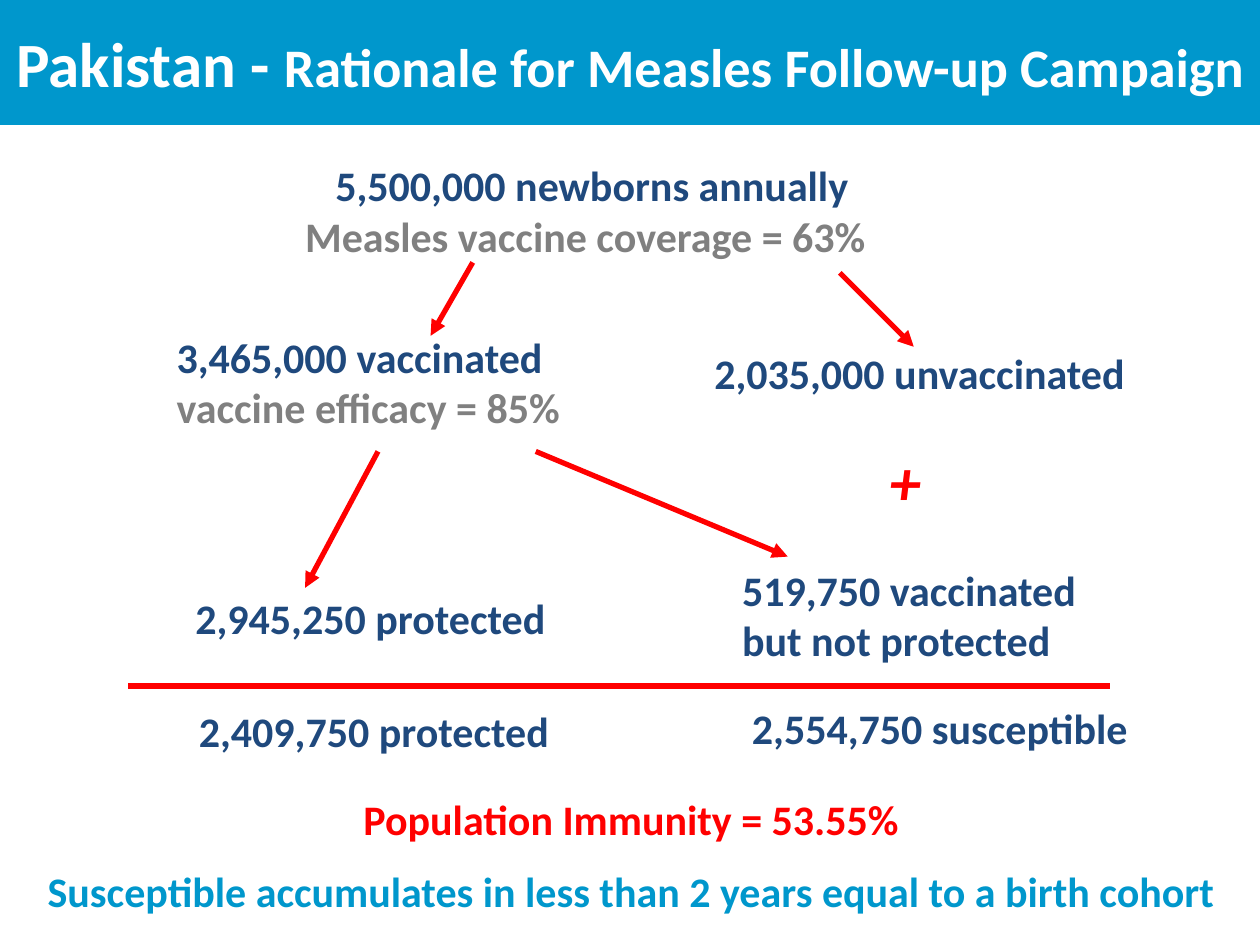
from lxml import etree
from pptx import Presentation
from pptx import util as u
from pptx.dml.color import RGBColor
from pptx.enum import shapes, text
from pptx.oxml.ns import qn

COLOURS = {
    "blue": "0097CC",
    "navy": "1F497D",
    "grey": "808080",
    "red": "FF0000",
    "white": "FFFFFF",
}


class FlowSlide:
    """Hold the style and the slide, and draw each kind of element."""

    font = "Calibri"
    size = 24

    def __init__(self, slide):
        self.slide = slide

    def colour(self, name):
        return RGBColor.from_string(COLOURS[name])

    def format_run(self, run, colour, size=None, italic=None):
        run.font.name = self.font
        run.font.size = u.Pt(size or self.size)
        run.font.bold = True
        run.font.italic = italic
        run.font.color.rgb = self.colour(colour)

    def clear_margins(self, frame):
        frame.margin_left = frame.margin_right = 0
        frame.margin_top = frame.margin_bottom = 0

    def banner(self, width, height, parts):
        shape = self.slide.shapes.add_shape(
            shapes.MSO_SHAPE.RECTANGLE, 0, 0, u.Cm(width), u.Cm(height))
        shape.shadow.inherit = False
        shape.fill.solid()
        shape.fill.fore_color.rgb = self.colour("blue")
        shape.line.fill.background()
        frame = shape.text_frame
        self.clear_margins(frame)
        frame.word_wrap = True
        frame.vertical_anchor = text.MSO_ANCHOR.MIDDLE
        paragraph = frame.paragraphs[0]
        paragraph.alignment = text.PP_ALIGN.CENTER
        for words, size in parts:
            run = paragraph.add_run()
            run.text = words
            self.format_run(run, "white", size)

    def label(self, words, left, top, width, height=1.02, colour="navy",
              size=None, italic=None):
        box = self.slide.shapes.add_textbox(
            u.Cm(left), u.Cm(top), u.Cm(width), u.Cm(height))
        frame = box.text_frame
        self.clear_margins(frame)
        frame.word_wrap = "\n" in words
        frame.text = words
        for paragraph in frame.paragraphs:
            self.format_run(paragraph.runs[0], colour, size, italic)

    def conclusion(self, lines, left, top, width, height):
        box = self.slide.shapes.add_textbox(
            u.Cm(left), u.Cm(top), u.Cm(width), u.Cm(height))
        frame = box.text_frame
        frame.word_wrap = True
        frame.text = "\n".join(words for words, _ in lines)
        for paragraph, (_, colour) in zip(frame.paragraphs, lines):
            paragraph.alignment = text.PP_ALIGN.CENTER
            paragraph.space_before = u.Pt(self.size / 2)
            self.format_run(paragraph.runs[0], colour)

    def line(self, start, end, width=3, arrow=True):
        connector = self.slide.shapes.add_connector(
            shapes.MSO_CONNECTOR.STRAIGHT, *map(u.Cm, start + end))
        connector.line.color.rgb = self.colour("red")
        connector.line.width = u.Pt(width)
        if arrow:
            outline = connector.line._get_or_add_ln()
            etree.SubElement(outline, qn("a:tailEnd"), type="triangle")
        etree.SubElement(connector._element.spPr, qn("a:effectLst"))


def main():
    presentation = Presentation()
    presentation.slide_width = u.Cm(25.4)
    presentation.slide_height = u.Cm(19.05)
    flow = FlowSlide(presentation.slides.add_slide(presentation.slide_layouts[6]))

    flow.banner(25.4, 2.52, [
        ("Pakistan - ", 36),
        ("Rationale for Measles Follow-up Campaign", 31),
    ])

    flow.label("5,500,000 newborns annually", 6.76, 3.22, 10.44)
    flow.label("Measles vaccine coverage = 63%", 6.15, 4.24, 11.4, colour="grey")
    flow.label("3,465,000 vaccinated", 3.56, 6.68, 7.44)
    flow.label("vaccine efficacy = 85%", 3.56, 7.7, 7.82, colour="grey")
    flow.label("2,035,000 unvaccinated", 14.4, 7.01, 8.36)
    flow.label("+", 17.93, 8.92, 0.74, 1.52, colour="red", size=36, italic=True)
    flow.label("2,945,250 protected", 3.94, 11.94, 7.11)
    flow.label("519,750 vaccinated\nbut not protected", 14.96, 11.38, 7.9, 2.06)
    flow.label("2,409,750 protected", 4.01, 14.22, 7.87)
    flow.label("2,554,750 susceptible", 15.16, 14.17, 7.65)
    flow.conclusion([
        ("Population Immunity = 53.55%", "red"),
        ("Susceptible accumulates in less than 2 years equal to a birth cohort", "blue"),
    ], -0.51, 15.88, 26.47, 2.82)

    flow.line((2.59, 13.82), (22.38, 13.82), width=3.5, arrow=False)
    for start, end in [
        ((7.62, 9.1), (6.15, 11.85)),
        ((10.8, 9.1), (15.88, 11.22)),
        ((9.53, 5.29), (8.68, 6.77)),
        ((16.93, 5.5), (18.42, 6.99)),
    ]:
        flow.line(start, end)

    presentation.save("out.pptx")


if __name__ == "__main__":
    main()
